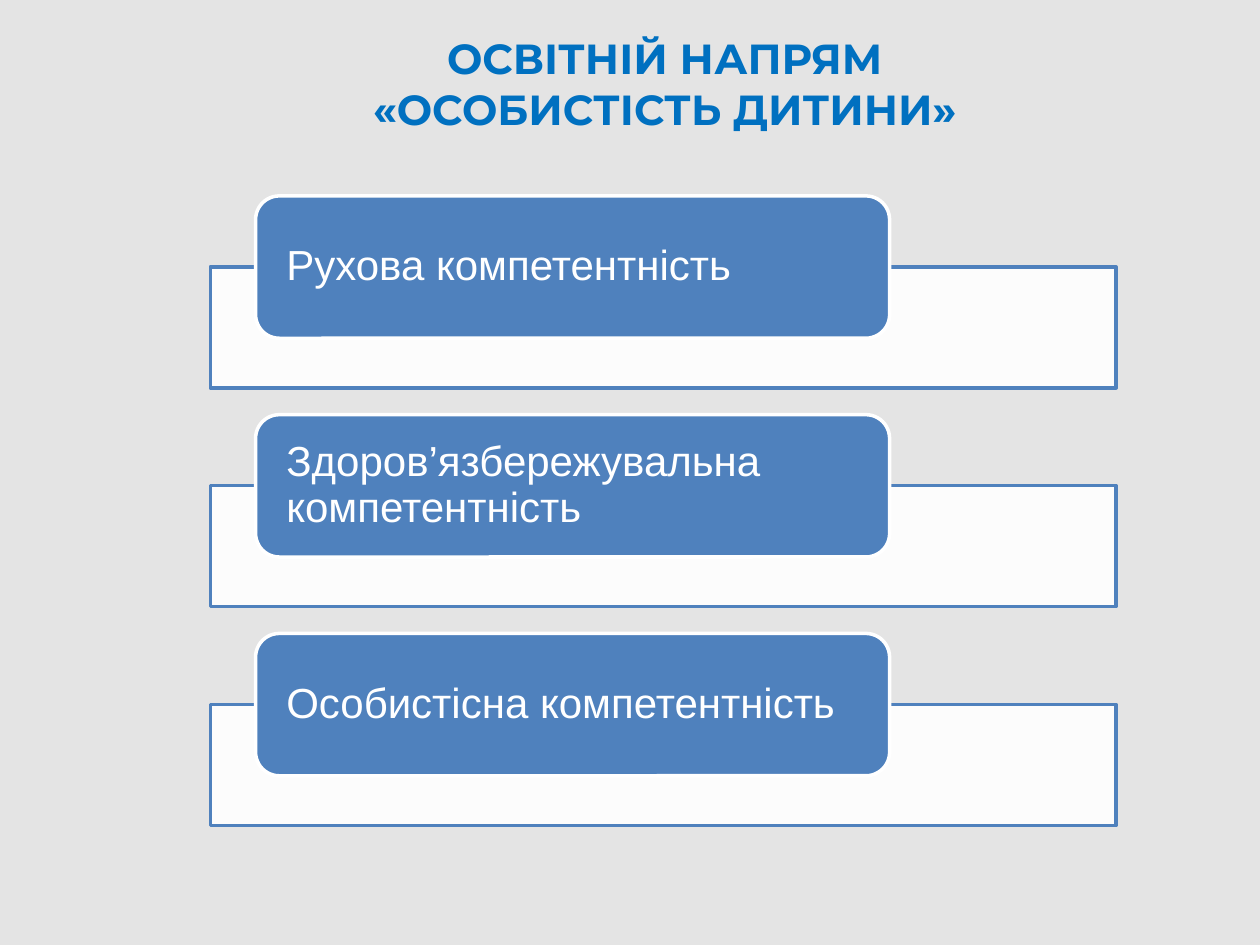
from lxml import etree
from pptx import Presentation
from pptx.dml.color import RGBColor
from pptx.enum.shapes import MSO_SHAPE
from pptx.enum.text import MSO_ANCHOR, MSO_AUTO_SIZE, PP_ALIGN
from pptx.oxml.ns import qn
from pptx.util import Cm, Pt

RECTANGLE = MSO_SHAPE.RECTANGLE
ROUNDED = MSO_SHAPE.ROUNDED_RECTANGLE
MIDDLE = MSO_ANCHOR.MIDDLE
LEFT, CENTER = PP_ALIGN.LEFT, PP_ALIGN.CENTER
NO_AUTOFIT = MSO_AUTO_SIZE.NONE

COLORS = {
    "background": "E4E4E4",
    "title": "0070C0",
    "accent": "4F81BD",
    "white": "FFFFFF",
}
COMPETENCES = [
    "Рухова компетентність",
    "Здоров’язбережувальна компетентність",
    "Особистісна компетентність",
]


def color(name):
    return RGBColor.from_string(COLORS[name])


def set_font(paragraph, name, color_name, bold=False):
    font = paragraph.font
    font.name, font.size, font.bold = name, Pt(24), bold
    font.color.rgb = color(color_name)


def add_box(slide, kind, box, fill, line):
    shape = slide.shapes.add_shape(kind, *(Cm(value) for value in box))
    shape.shadow.inherit = False
    shape.fill.solid()
    shape.fill.fore_color.rgb = color(fill)
    shape.line.color.rgb = color(line)
    shape.line.width = Pt(2)
    return shape


def fill_title(slide, left, top, width, height):
    title = slide.shapes.title
    title.left, title.top = Cm(left), Cm(top)
    title.width, title.height = Cm(width), Cm(height)
    frame = title.text_frame
    frame.text = "ОСВІТНІЙ НАПРЯМ «ОСОБИСТІСТЬ ДИТИНИ»"
    frame.word_wrap = True
    frame.auto_size = NO_AUTOFIT
    frame.vertical_anchor = MIDDLE
    paragraph = frame.paragraphs[0]
    paragraph.alignment = CENTER
    set_font(paragraph, "Montserrat", "title", bold=True)


def add_competence(slide, text, left, top, width, height):
    """Place a label card over the upper part of a translucent band."""
    band_height, card_height = 2.44, 2.87
    band = add_box(slide, RECTANGLE,
                   (left, top + height - band_height, width, band_height),
                   "white", "accent")
    fill_color = band.fill._xPr.find(".//" + qn("a:srgbClr"))
    etree.SubElement(fill_color, qn("a:alpha"), val="90000")

    card = add_box(slide, ROUNDED,
                   (left + width * 0.05, top, width * 0.7, card_height),
                   "accent", "white")
    frame = card.text_frame
    frame.text = text
    frame.word_wrap = True
    frame.vertical_anchor = MIDDLE
    frame.margin_left = frame.margin_right = Cm(0.48)
    frame.margin_top = frame.margin_bottom = 0
    paragraph = frame.paragraphs[0]
    paragraph.alignment = LEFT
    paragraph.line_spacing = 0.9
    set_font(paragraph, "Arial", "white")


def add_competence_list(slide, left, top, width, item_height, pitch):
    for index, text in enumerate(COMPETENCES):
        add_competence(slide, text, left, top + index * pitch, width, item_height)


def main():
    presentation = Presentation()
    presentation.slide_width, presentation.slide_height = Cm(25.4), Cm(19.05)
    slide = presentation.slides.add_slide(presentation.slide_layouts[5])
    background = slide.background.fill
    background.solid()
    background.fore_color.rgb = color("background")
    fill_title(slide, 5.5, 0.53, 15.8, 2.3)
    add_competence_list(slide, 4.24, 3.95, 18.26, item_height=3.87, pitch=4.41)
    presentation.save("out.pptx")


if __name__ == "__main__":
    main()
